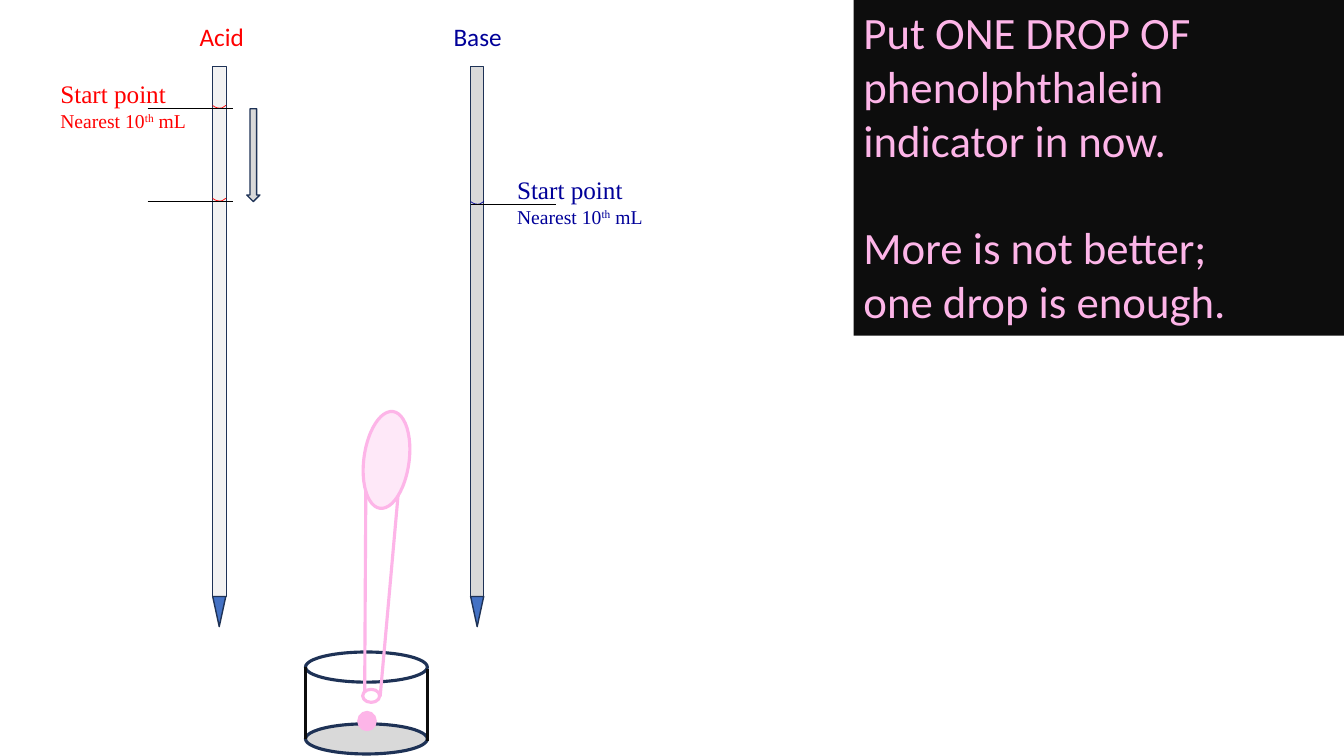
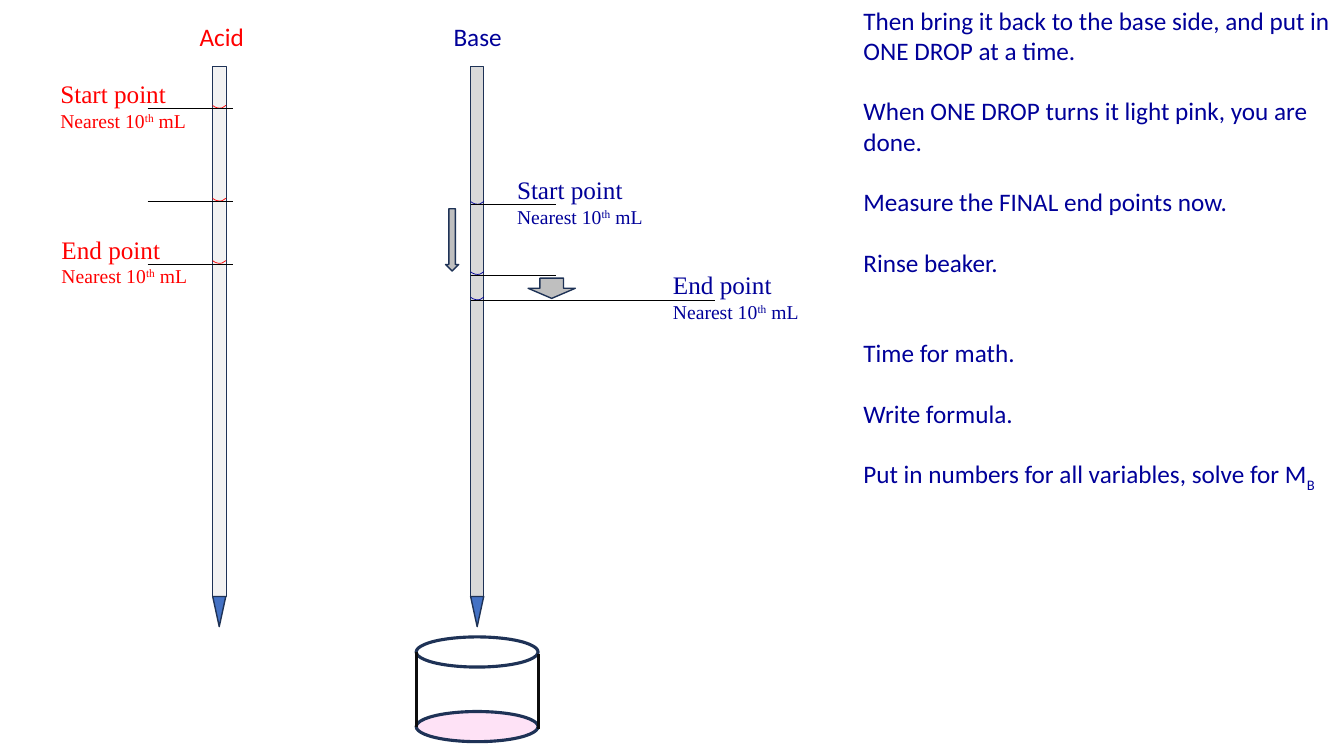
from dataclasses import dataclass

from lxml.etree import SubElement
from pptx import Presentation
from pptx.dml.color import RGBColor as Rgb
from pptx.enum.shapes import MSO_CONNECTOR as Connector
from pptx.enum.shapes import MSO_SHAPE as Preset
from pptx.oxml.ns import qn
from pptx.util import Cm, Pt


@dataclass(frozen=True)
class Theme:
    """Colours, fonts, type sizes and line widths of the slides."""

    acid: str = "FF0000"
    base: str = "000099"
    outline: str = "1E3256"
    black: str = "000000"
    ink: str = "0D0D0D"
    acid_glass: str = "F2F2F2"
    grey: str = "D9D9D9"
    arrow_grey: str = "BFBFBF"
    tip: str = "4472C4"
    pink: str = "FDB5E8"
    bulb_pink: str = "FEE8F8"
    solution_pink: str = "FEE2F6"
    sans: str = "Calibri"
    serif: str = "Times New Roman"
    callout: int = 32
    body: int = 18
    note: int = 14
    hairline: float = 0.5
    bold_line: float = 2.25
    line_height: float = 1.2


THEME = Theme()


@dataclass(frozen=True)
class Burette:
    """One burette: its label, place, colours and scale mark direction."""

    label: str
    left: float
    label_shift: float
    glass: str
    ink: str
    mark_shift: float
    top: float = 1.68
    width: float = 0.33
    height: float = 13.34


ACID = Burette("Acid", 5.36, -0.58, THEME.acid_glass, THEME.acid, -1.64)
BASE = Burette("Base", 11.86, -0.68, THEME.grey, THEME.base, 0)
MARK_LENGTH = 2.14


def apply_format(target, values):
    """Set each attribute of the target from a dict."""
    for name, value in values.items():
        setattr(target, name, value)


def add_preset(shapes, preset, box, fill, line, width, rotation=0):
    """Add a preset shape with a flat fill and an outline."""
    figure = shapes.add_shape(preset, *map(Cm, box))
    figure.rotation = rotation
    figure.shadow.inherit = False
    if fill:
        figure.fill.solid()
        figure.fill.fore_color.rgb = Rgb.from_string(fill)
    else:
        figure.fill.background()
    figure.line.width = Pt(width)
    figure.line.color.rgb = Rgb.from_string(line)


def add_line(shapes, start, end, color, width):
    """Add a straight line without a shadow."""
    stroke = shapes.add_connector(Connector.STRAIGHT, *map(Cm, start + end))
    stroke.line.width = Pt(width)
    stroke.line.color.rgb = Rgb.from_string(color)
    SubElement(stroke._element.spPr, qn("a:effectLst"))


def add_text(shapes, box, paragraphs, font_name, color, fill=None):
    """Add a text box from (size, lines of space before, runs) paragraphs."""
    frame_shape = shapes.add_textbox(*map(Cm, box))
    if fill:
        frame_shape.fill.solid()
        frame_shape.fill.fore_color.rgb = Rgb.from_string(fill)
    frame = frame_shape.text_frame
    frame.word_wrap = True
    for index, (size, gap, runs) in enumerate(paragraphs):
        paragraph = frame.add_paragraph() if index else frame.paragraphs[0]
        paragraph.space_before = Pt(gap * size * THEME.line_height)
        for words, baseline in runs:
            run = paragraph.add_run()
            apply_format(run, {"text": words})
            apply_format(run.font, {"name": font_name, "size": Pt(size)})
            run.font.color.rgb = Rgb.from_string(color)
            if baseline:
                run.font._element.set("baseline", str(baseline * 1000))


def draw_burette(shapes, burette):
    """Draw the labelled tube and its tip."""
    left, top, width = burette.left, burette.top, burette.width
    add_preset(shapes, Preset.RECTANGLE, (left, top, width, burette.height),
               burette.glass, THEME.outline, 0.25)
    add_preset(shapes, Preset.ISOSCELES_TRIANGLE,
               (left, top + burette.height + 0.01, width, 0.76),
               THEME.tip, THEME.outline, 1, 180)
    add_text(shapes, (left + burette.label_shift, top - 1.27, 2.5, 1.02),
             [(THEME.body, 0, [(burette.label, 0)])], THEME.sans, burette.ink)


def draw_level(shapes, burette, level, length=MARK_LENGTH):
    """Draw the meniscus and the scale mark at a level."""
    add_preset(shapes, Preset.ARC, (burette.left - 0.08, level - 0.5, 0.43, 0.51),
               None, burette.ink, THEME.hairline, 129.7)
    start = burette.left + burette.mark_shift
    add_line(shapes, (start, level), (start + length, level),
             THEME.black, THEME.hairline)


def draw_reading(shapes, burette, name, left, level):
    """Write the name and precision of a reading beside its level."""
    precision = [("Nearest 10", 0), ("th", 30), (" mL", 0)]
    add_text(shapes, (left, level - 0.88, 4.72, 1.63),
             [(THEME.body, 0, [(name, 0)]), (THEME.note, 0, precision)],
             THEME.serif, burette.ink)


def draw_arrow(shapes, box, fill):
    """Draw an arrow for the falling level."""
    add_preset(shapes, Preset.DOWN_ARROW, box, fill, THEME.outline, 1)


def draw_beaker(shapes, box, solution):
    """Draw a beaker with its solution inside the box."""
    left, top, width, height = box
    rim = 0.76
    wall = height - rim
    for oval_top, fill in ((top, None), (top + wall, solution)):
        add_preset(shapes, Preset.OVAL, (left, oval_top, width, rim),
                   fill, THEME.outline, THEME.bold_line)
    for x, y in ((left, top + rim / 2), (left + width, top + rim / 2 + 0.05)):
        add_line(shapes, (x, y), (x, y + wall), THEME.ink, THEME.bold_line)


def draw_dropper(shapes, left, top):
    """Draw the indicator dropper and the drop below it."""
    dropper = shapes.add_group_shape().shapes
    pen = (THEME.pink, THEME.bold_line)
    add_preset(dropper, Preset.OVAL, (left + 0.12, top + 7.01, 0.43, 0.33), None, *pen)
    add_preset(dropper, Preset.OVAL, (left + 0.15, top, 1.14, 2.46),
               THEME.bulb_pink, *pen, 7.7)
    for x1, y1, x2, y2 in ((0.2, 2.01, 0.17, 7.06), (1.01, 2.14, 0.56, 7.19)):
        add_line(dropper, (left + x1, top + y1), (left + x2, top + y2), *pen)
    add_preset(shapes, Preset.OVAL, (left, top + 7.57, 0.46, 0.48),
               THEME.pink, THEME.pink, 1)


def add_titration(deck):
    """Add a slide with both burettes and the readings taken so far."""
    shapes = deck.slides.add_slide(deck.slide_layouts[6]).shapes
    for burette in (ACID, BASE):
        draw_burette(shapes, burette)
    for burette, level in ((ACID, 2.74), (ACID, 5.08), (BASE, 5.16)):
        draw_level(shapes, burette, level)
    draw_reading(shapes, ACID, "Start point", 1.27, 2.74)
    draw_reading(shapes, BASE, "Start point", 12.78, 5.16)
    return shapes


def build_indicator(deck):
    """Build the slide on adding the indicator."""
    shapes = add_titration(deck)
    advice = [
        (0, "Put ONE DROP OF phenolphthalein indicator in now."),
        (1, "More is not better;"),
        (0, "one drop is enough."),
    ]
    add_text(shapes, (21.51, 0, 12.36, 8.46),
             [(THEME.callout, gap, [(words, 0)]) for gap, words in advice],
             THEME.sans, THEME.pink, THEME.ink)
    draw_arrow(shapes, (6.22, 2.74, 0.33, 2.34), THEME.grey)
    draw_beaker(shapes, (7.7, 16.43, 3.07, 2.57), THEME.grey)
    draw_dropper(shapes, 9.02, 10.36)


def build_end_point(deck):
    """Build the slide on the end points and the calculation."""
    shapes = add_titration(deck)
    steps = [
        (0, [("Then bring it back to the base side, and put in ONE DROP at a time.", 0)]),
        (1, [("When ONE DROP turns it light pink, you are done.", 0)]),
        (1, [("Measure the FINAL end points now.", 0)]),
        (1, [("Rinse beaker.", 0)]),
        (2, [("Time for math.", 0)]),
        (1, [("Write formula.", 0)]),
        (1, [("Put in numbers for all variables, solve for M", 0), ("B", -25)]),
    ]
    add_text(shapes, (21.51, 0, 12.36, 14.88),
             [(THEME.body, gap, runs) for gap, runs in steps],
             THEME.sans, THEME.base)
    draw_level(shapes, ACID, 6.65)
    draw_level(shapes, BASE, 6.93)
    draw_level(shapes, BASE, 7.57, 6.15)
    draw_reading(shapes, ACID, "End point", 1.3, 6.65)
    draw_reading(shapes, BASE, "End point", 16.71, 7.54)
    for box in ((11.23, 5.26, 0.33, 1.57), (13.31, 7.01, 1.19, 0.51)):
        draw_arrow(shapes, box, THEME.arrow_grey)
    draw_beaker(shapes, (10.49, 16.05, 3.07, 2.64), THEME.solution_pink)


def main():
    """Build and save the presentation."""
    deck = Presentation()
    apply_format(deck, {"slide_width": Cm(33.87), "slide_height": Cm(19.05)})
    build_indicator(deck)
    build_end_point(deck)
    deck.save("out.pptx")


if __name__ == "__main__":
    main()
